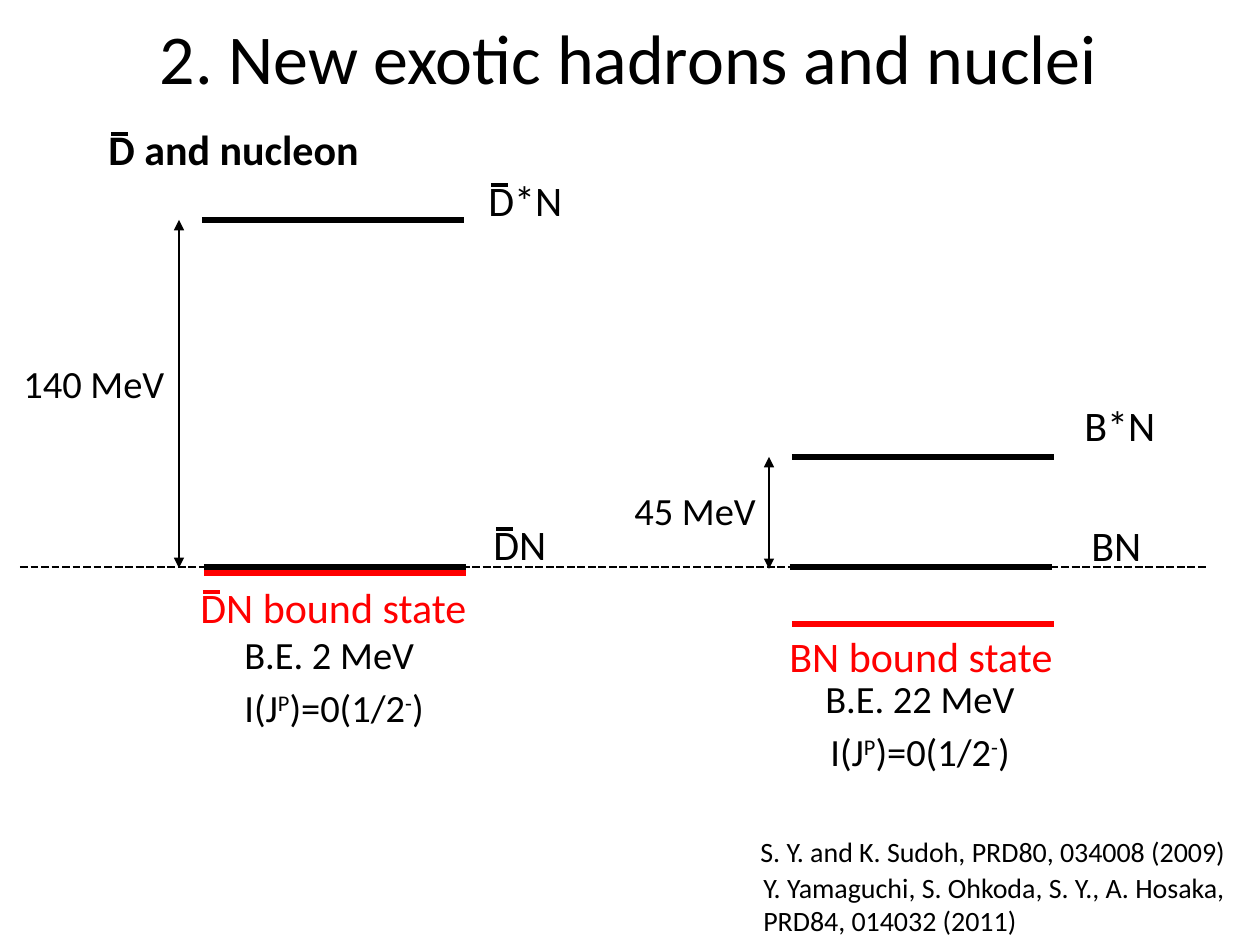
from dataclasses import dataclass

from lxml import etree
from pptx import Presentation
from pptx.dml.color import RGBColor
from pptx.enum.dml import MSO_LINE
from pptx.enum.shapes import MSO_CONNECTOR
from pptx.enum.text import MSO_ANCHOR, MSO_AUTO_SIZE, PP_ALIGN
from pptx.oxml.ns import qn
from pptx.util import Inches, Pt

STRAIGHT = MSO_CONNECTOR.STRAIGHT
DASH = MSO_LINE.SQUARE_DOT
TOP, LEFT = MSO_ANCHOR.TOP, PP_ALIGN.LEFT
NO_AUTOFIT = MSO_AUTO_SIZE.NONE

PX_PER_INCH = 126
FONT = "Calibri"
BLACK, RED = "000000", "FF0000"
LEVEL_LENGTH = 262
TITLE_ONLY = 5


@dataclass
class Level:
    x: int
    y: int
    color: str = BLACK


@dataclass
class Gap:
    x: int
    top: int
    bottom: int


@dataclass
class Label:
    text: str
    x: int
    y: int
    width: int
    height: int
    size: int = 24
    color: str = BLACK
    bold: bool = False
    barred: bool = False  # antiparticle bar over the first letter
    bar_weight: float = 2


def px(value: int) -> int:
    return round(Inches(1) * value / PX_PER_INCH)


def rgb(color: str) -> RGBColor:
    return RGBColor.from_string(color)


def style_run(run, size: int, color: str = BLACK, bold: bool = False) -> None:
    run.font.name = FONT
    run.font.size = Pt(size)
    run.font.bold = bold
    run.font.color.rgb = rgb(color)


def add_line(slide, x1: int, y1: int, x2: int, y2: int, weight: float, color: str = BLACK):
    line = slide.shapes.add_connector(STRAIGHT, px(x1), px(y1), px(x2), px(y2))
    line.line.color.rgb = rgb(color)
    line.line.width = Pt(weight)
    etree.SubElement(line._element.spPr, qn("a:effectLst"))
    return line


def add_level(slide, level: Level) -> None:
    add_line(slide, level.x, level.y, level.x + LEVEL_LENGTH, level.y, 3, level.color)


def add_gap(slide, gap: Gap) -> None:
    arrow = add_line(slide, gap.x, gap.bottom, gap.x, gap.top, 1.5)
    for end in ("a:headEnd", "a:tailEnd"):
        etree.SubElement(arrow.line._get_or_add_ln(), qn(end), type="triangle")


def add_text_frame(slide, x: int, y: int, width: int, height: int):
    box = slide.shapes.add_textbox(px(x), px(y), px(width), px(height))
    box.text_frame.word_wrap = True
    return box.text_frame


def add_label(slide, label: Label) -> None:
    frame = add_text_frame(slide, label.x, label.y, label.width, label.height)
    frame.text = label.text
    for paragraph in frame.paragraphs:
        for run in paragraph.runs:
            style_run(run, label.size, label.color, label.bold)
    if label.barred:
        x, y = label.x + 15, label.y + 17
        add_line(slide, x, y, x + 17, y, label.bar_weight, label.color)


def add_quantum_numbers(slide, x: int, y: int) -> None:
    paragraph = add_text_frame(slide, x, y, 209, 59).paragraphs[0]
    for text, raised in (("I(J", False), ("P", True), (")=0(1/2", False), ("-", True), (")", False)):
        run = paragraph.add_run()
        run.text = text
        style_run(run, 22)
        if raised:
            run._r.get_or_add_rPr().set("baseline", "30000")


def add_title(slide, text: str) -> None:
    title = slide.shapes.title
    title.left, title.top, title.width, title.height = px(147), px(8), px(965), px(115)
    frame = title.text_frame
    frame.text = text
    frame.auto_size = NO_AUTOFIT
    frame.vertical_anchor = TOP
    frame.paragraphs[0].alignment = LEFT
    style_run(frame.paragraphs[0].runs[0], 40)


LEVELS = [
    # D meson and nucleon
    Level(204, 567), Level(204, 573, RED), Level(202, 220),
    # B meson and nucleon
    Level(790, 567), Level(792, 457), Level(792, 624, RED),
]
GAPS = [Gap(179, 220, 568), Gap(769, 457, 569)]
LABELS = [
    Label("D and nucleon", 96, 117, 276, 63, bold=True, barred=True, bar_weight=2.25),
    # D meson and nucleon
    Label("D*N", 476, 168, 100, 63, barred=True),
    Label("DN", 481, 512, 78, 63, barred=True),
    Label("DN bound state", 188, 575, 292, 63, color=RED, barred=True),
    Label("140 MeV", 11, 354, 180, 59, 22),
    Label("B.E. 2 MeV", 232, 625, 203, 59, 22),
    # B meson and nucleon
    Label("B*N", 1072, 393, 100, 63),
    Label("BN", 1079, 513, 78, 63),
    Label("BN bound state", 777, 624, 297, 63, color=RED),
    Label("45 MeV", 622, 481, 149, 59, 22),
    Label("B.E. 22 MeV", 813, 669, 217, 59, 22),
    # References
    Label("S. Y. and K. Sudoh, PRD80, 034008 (2009)", 748, 828, 504, 47, 16),
    Label("Y. Yamaguchi, S. Ohkoda, S. Y., A. Hosaka,\nPRD84, 014032 (2011)",
          751, 864, 504, 81, 16),
]
QUANTUM_NUMBERS = [(232, 678), (818, 722)]


def main() -> None:
    deck = Presentation()
    deck.slide_width, deck.slide_height = px(1260), px(945)
    slide = deck.slides.add_slide(deck.slide_layouts[TITLE_ONLY])
    add_title(slide, "2. New exotic hadrons and nuclei")

    # Threshold shared by both systems
    threshold = add_line(slide, 20, 567, 1208, 567, 1.5)
    threshold.line.dash_style = DASH

    for level in LEVELS:
        add_level(slide, level)
    for gap in GAPS:
        add_gap(slide, gap)
    for label in LABELS:
        add_label(slide, label)
    for x, y in QUANTUM_NUMBERS:
        add_quantum_numbers(slide, x, y)

    deck.save("out.pptx")


if __name__ == "__main__":
    main()
